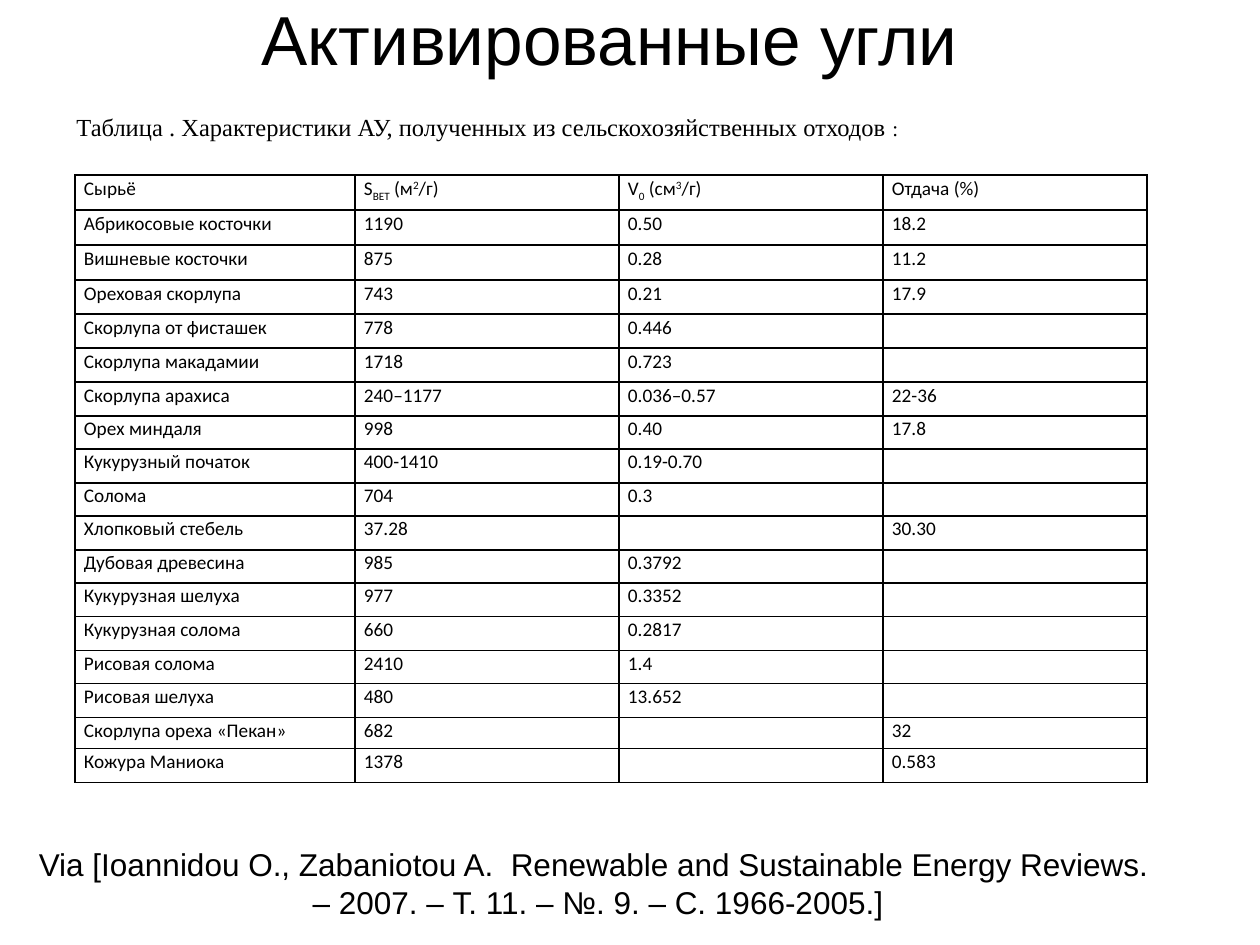
from lxml import etree
from pptx import Presentation
from pptx.dml.color import RGBColor
from pptx.enum.text import MSO_ANCHOR, PP_ALIGN
from pptx.oxml.ns import qn
from pptx.util import Pt

PX = 914400 / 126
BLACK = RGBColor(0x00, 0x00, 0x00)
LEFT, CENTER = PP_ALIGN.LEFT, PP_ALIGN.CENTER
TOP, MIDDLE = MSO_ANCHOR.TOP, MSO_ANCHOR.MIDDLE
SUBSCRIPT, SUPERSCRIPT = -25000, 30000

COL_WIDTHS = [280, 264, 264, 264]
ROW_HEIGHTS = [35, 35, 35, 34, 34, 34, 34, 33, 34, 33, 34, 33, 34, 34, 33, 34, 31, 34]
HEADER = [
    [("Сырьё", 0)],
    [("S", 0), ("BET", SUBSCRIPT), (" (м", 0), ("2", SUPERSCRIPT), ("/г)", 0)],
    [("V", 0), ("0", SUBSCRIPT), (" (см", 0), ("3", SUPERSCRIPT), ("/г)", 0)],
    [("Отдача (%)", 0)],
]
CARBONS = [
    ("Абрикосовые косточки", "1190", "0.50", "18.2"),
    ("Вишневые косточки", "875", "0.28", "11.2"),
    ("Ореховая скорлупа", "743", "0.21", "17.9"),
    ("Скорлупа от фисташек", "778", "0.446", ""),
    ("Скорлупа макадамии", "1718", "0.723", ""),
    ("Скорлупа арахиса", "240–1177", "0.036–0.57", "22-36"),
    ("Орех миндаля", "998", "0.40", "17.8"),
    ("Кукурузный початок", "400-1410", "0.19-0.70", ""),
    ("Солома", "704", "0.3", ""),
    ("Хлопковый стебель", "37.28", "", "30.30"),
    ("Дубовая древесина", "985", "0.3792", ""),
    ("Кукурузная шелуха", "977", "0.3352", ""),
    ("Кукурузная солома", "660", "0.2817", ""),
    ("Рисовая солома", "2410", "1.4", ""),
    ("Рисовая шелуха", "480", "13.652", ""),
    ("Скорлупа ореха «Пекан»", "682", "", "32"),
    ("Кожура Маниока", "1378", "", "0.583"),
]


def px(n):
    """Turn pixels into EMU."""
    return round(n * PX)


def format_run(r, font, size):
    """Set the typeface, size and colour of a run."""
    r.font.name = font
    r.font.size = Pt(size)
    r.font.color.rgb = BLACK


def add_text(slide, box, lines, font, size, align=CENTER, anchor=TOP):
    """Add a text box with one paragraph per line and return its frame."""
    tf = slide.shapes.add_textbox(*map(px, box)).text_frame
    tf.word_wrap = False
    tf.vertical_anchor = anchor
    tf.text = "\n".join(lines)
    for p in tf.paragraphs:
        p.alignment = align
        for r in p.runs:
            format_run(r, font, size)
    return tf


def add_borders(cell):
    """Draw a thin black line on every side of a cell."""
    tcPr = cell._tc.get_or_add_tcPr()
    for i, side in enumerate(("a:lnL", "a:lnR", "a:lnT", "a:lnB")):
        ln = etree.Element(qn(side), w=str(Pt(1)))
        fill = etree.SubElement(ln, qn("a:solidFill"))
        etree.SubElement(fill, qn("a:srgbClr"), val=str(BLACK))
        tcPr.insert(i, ln)


def fill_cell(cell, pieces):
    """Write (text, baseline) pieces into a plain bordered cell."""
    cell.margin_left = cell.margin_right = px(9)
    cell.margin_top = cell.margin_bottom = 0
    cell.fill.background()
    add_borders(cell)
    p = cell.text_frame.paragraphs[0]
    p.alignment = LEFT
    p.line_spacing = 1.07
    p.space_after = Pt(8)
    for text, baseline in pieces:
        if text:
            r = p.add_run()
            r.text = text
            format_run(r, "Calibri", 11)
            if baseline:
                r.font._element.set("baseline", str(baseline))
    etree.SubElement(p._p, qn("a:endParaRPr"), sz="1100")


def add_carbon_table(slide, left, top):
    """Add the table of activated carbon properties."""
    rows = [HEADER] + [[[(text, 0)] for text in row] for row in CARBONS]
    size = px(sum(COL_WIDTHS)), px(sum(ROW_HEIGHTS))
    table = slide.shapes.add_table(
        len(rows), len(COL_WIDTHS), px(left), px(top), *size).table
    table.first_row = table.horz_banding = False
    for column, width in zip(table.columns, COL_WIDTHS):
        column.width = px(width)
    for row, height, values in zip(table.rows, ROW_HEIGHTS, rows):
        row.height = px(height)
        for cell, pieces in zip(row.cells, values):
            fill_cell(cell, pieces)


def main():
    """Build the slide and save it."""
    prs = Presentation()
    prs.slide_width, prs.slide_height = px(1260), px(945)
    slide = prs.slides.add_slide(prs.slide_layouts[6])

    add_text(slide, (64, 0, 1111, 76), ["Активированные угли "],
             "Arial", 39.6, anchor=MIDDLE)
    add_carbon_table(slide, 75, 175)
    caption = add_text(
        slide, (64, 106, 853, 81),
        ["Таблица . Характеристики АУ, полученных из сельскохозяйственных отходов "],
        "Times New Roman", 14, align=LEFT)
    colon = caption.paragraphs[0].add_run()
    colon.text = ":"
    format_run(colon, "Times New Roman", 12)
    add_text(slide, (21, 839, 1154, 89),
             ["Via [Ioannidou O., Zabaniotou A.  Renewable and Sustainable Energy Reviews. ",
              "– 2007. – Т. 11. – №. 9. – С. 1966-2005.]"],
             "Arial", 18)
    prs.save("out.pptx")


if __name__ == "__main__":
    main()
